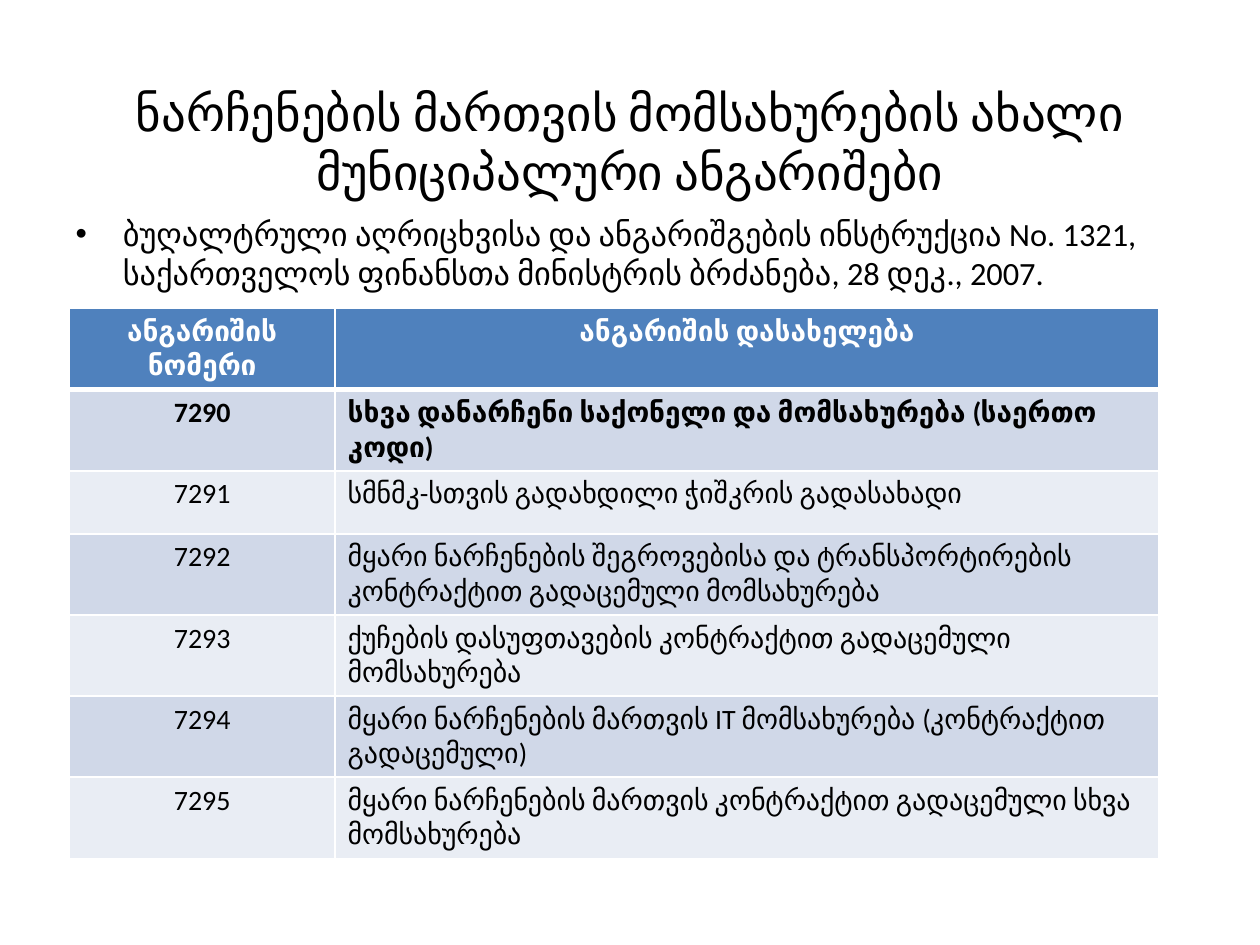
from lxml.etree import SubElement
from pptx import Presentation
from pptx.dml.color import RGBColor
from pptx.enum.text import MSO_ANCHOR as Anchor, MSO_AUTO_SIZE as AutoSize, PP_ALIGN as Align
from pptx.oxml.ns import qn
from pptx.util import Inches, Pt

COLORS = {"text": "000000", "white": "FFFFFF", "header": "4F81BD",
          "odd": "D0D8E8", "even": "E9EDF4"}
HEADINGS = ("ანგარიშის ნომერი", "ანგარიშის დასახელება")
ACCOUNTS = [
    ("7290", "სხვა დანარჩენი საქონელი და მომსახურება (საერთო კოდი)"),
    ("7291", "სმნმკ-სთვის გადახდილი ჭიშკრის გადასახადი"),
    ("7292", "მყარი ნარჩენების შეგროვებისა და ტრანსპორტირების კონტრაქტით გადაცემული მომსახურება"),
    ("7293", "ქუჩების დასუფთავების კონტრაქტით გადაცემული მომსახურება"),
    ("7294", "მყარი ნარჩენების მართვის IT მომსახურება (კონტრაქტით გადაცემული)"),
    ("7295", "მყარი ნარჩენების მართვის კონტრაქტით გადაცემული სხვა მომსახურება"),
]


class SlideBuilder:
    """Hold the slide and its style, and add each kind of element."""

    font_name = "Calibri"

    def __init__(self, slide):
        self.slide = slide

    def set_text(self, frame, text, size, color="text", bold=False, align=Align.LEFT):
        frame.text = text
        paragraph = frame.paragraphs[0]
        paragraph.alignment = align
        font = paragraph.font
        font.name, font.size, font.bold = self.font_name, Pt(size), bold
        font.color.rgb = RGBColor.from_string(COLORS[color])

    def placeholder(self, index, box, text, size, anchor, align):
        holder = self.slide.placeholders[index]
        holder.left, holder.top, holder.width, holder.height = map(Inches, box)
        frame = holder.text_frame
        frame.auto_size = AutoSize.NONE
        frame.vertical_anchor = anchor
        self.set_text(frame, text, size, align=align)
        frame.paragraphs[0].space_before = Pt(0)

    def borders(self, cell, bottom):
        properties = cell._tc.get_or_add_tcPr()
        for side, width in (("L", 1), ("R", 1), ("T", 1), ("B", bottom)):
            line = SubElement(properties, qn(f"a:ln{side}"), w=str(Pt(width)))
            fill = SubElement(line, qn("a:solidFill"))
            SubElement(fill, qn("a:srgbClr"), val=COLORS["white"])

    def table(self, box, rows, widths, heights):
        table = self.slide.shapes.add_table(len(rows), len(widths), *map(Inches, box)).table
        for column, width in zip(table.columns, widths):
            column.width = Inches(width)
        for r, (values, height) in enumerate(zip(rows, heights)):
            table.rows[r].height = Inches(height)
            is_header = r == 0
            band = "header" if is_header else "odd" if r % 2 else "even"
            for c, value in enumerate(values):
                cell = table.cell(r, c)
                self.borders(cell, bottom=3 if is_header else 1)
                cell.fill.solid()
                cell.fill.fore_color.rgb = RGBColor.from_string(COLORS[band])
                self.set_text(cell.text_frame, value, 16,
                              color="white" if is_header else "text", bold=r < 2,
                              align=Align.CENTER if is_header or c == 0 else Align.LEFT)


def main():
    deck = Presentation()
    deck.slide_width, deck.slide_height = Inches(10), Inches(7.5)
    builder = SlideBuilder(deck.slides.add_slide(deck.slide_layouts[1]))
    builder.placeholder(0, (0.5, 0.69, 9, 0.86),
                        "ნარჩენების მართვის მომსახურების ახალი მუნიციპალური ანგარიშები",
                        28, Anchor.MIDDLE, Align.CENTER)
    builder.placeholder(1, (0.5, 1.65, 9, 0.7),
                        "ბუღალტრული აღრიცხვისა და ანგარიშგების ინსტრუქცია No. 1321, "
                        "საქართველოს ფინანსთა მინისტრის ბრძანება, 28 დეკ., 2007.",
                        18.5, Anchor.TOP, Align.LEFT)
    builder.table((0.55, 2.45, 8.65, 3.51), [HEADINGS, *ACCOUNTS],
                  (2.11, 6.54), [0.51] + [0.5] * len(ACCOUNTS))
    deck.save("out.pptx")


if __name__ == "__main__":
    main()
